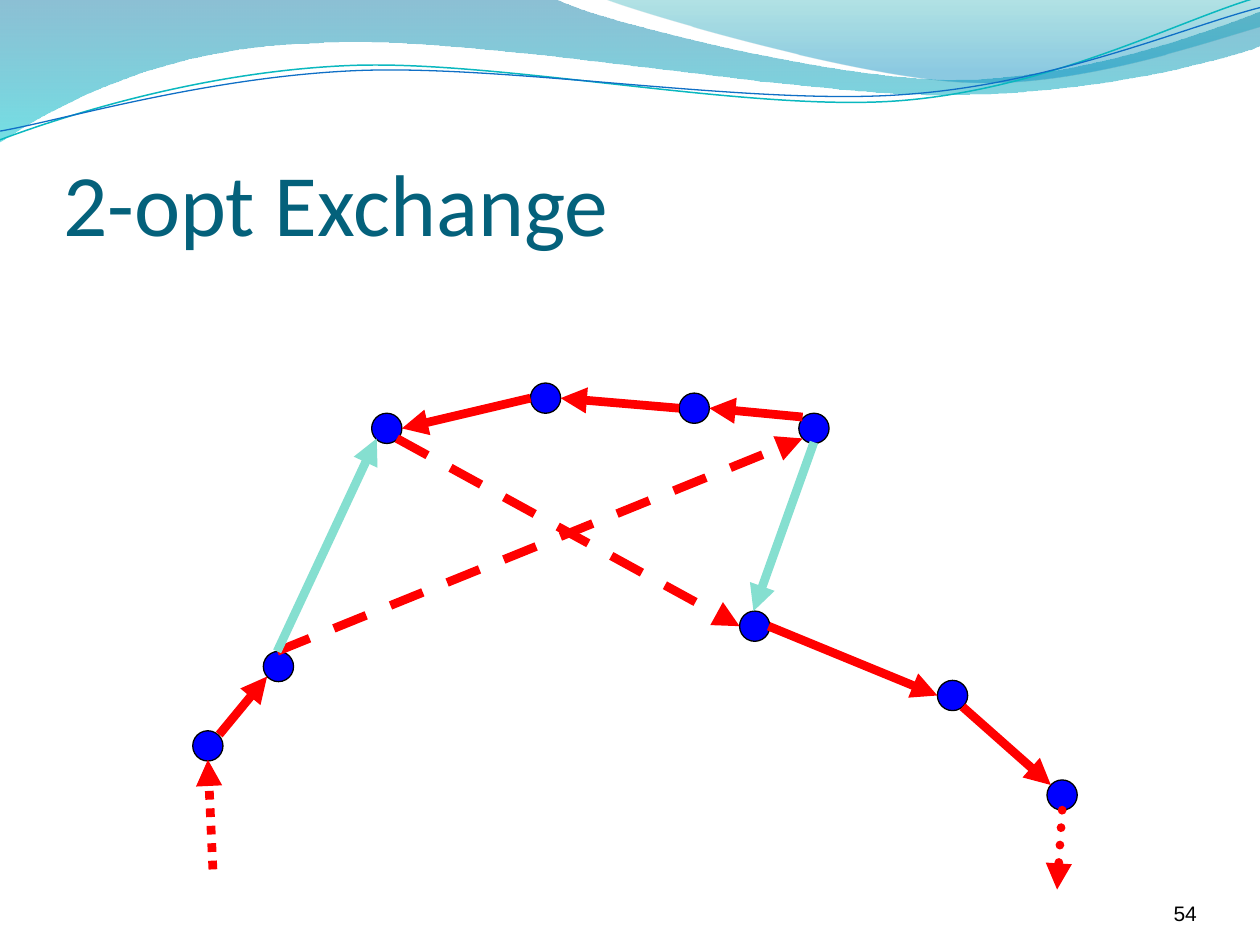
import math
from typing import NamedTuple, Optional

from lxml import etree
from pptx import Presentation
from pptx import util as u
from pptx.dml.color import RGBColor
from pptx.enum import dml, shapes, text
from pptx.oxml.ns import qn

PX = 9144  # EMU per px, 100 px to the inch
NODE_SIZE = 24

WHITE = RGBColor(0xFF, 0xFF, 0xFF)
BLACK = RGBColor(0x00, 0x00, 0x00)
RED = RGBColor(0xFF, 0x00, 0x00)
BLUE = RGBColor(0x00, 0x00, 0xFF)
MINT = RGBColor(0x85, 0xDF, 0xD0)
TITLE_TEAL = RGBColor(0x04, 0x61, 0x7B)
LINE_TEAL = RGBColor(0x0A, 0xB8, 0xBF)
LINE_BLUE = RGBColor(0x0F, 0x6F, 0xC6)
WAVE_BLUE = RGBColor(0x00, 0x74, 0xA1)
WAVE_CYAN = RGBColor(0x00, 0xC6, 0xCF)
CREST_TEAL = RGBColor(0x00, 0xA1, 0xA9)
CREST_BLUE = RGBColor(0x00, 0x8B, 0xBF)

DASH = dml.MSO_LINE.DASH
DOT = dml.MSO_LINE.ROUND_DOT


class Stop(NamedTuple):
    position: float
    color: RGBColor
    opacity: int


class Wave(NamedTuple):
    """An outline: steps of one point are straight, of three points Bezier."""
    start: tuple
    steps: list
    stops: tuple = ()
    line: Optional[RGBColor] = None
    width: float = 0
    tilt: float = 0
    pivot: tuple = (0, 0)


class Arrow(NamedTuple):
    start: tuple
    end: tuple
    color: RGBColor = RED
    dash: Optional[dml.MSO_LINE] = None
    round_cap: bool = False


WAVES = [
    Wave((0, 0), [[(440, -1)], [(476, 17), (664, 63), (758, 63)],
                  [(853, 63), (958, 26), (1000, 9)], [(1001, 36)],
                  [(983, 44), (870, 76), (746, 75)], [(622, 75), (382, 28), (257, 34)],
                  [(129, 36), (46, 83), (-1, 113)], [(0, 0)]],
         stops=(Stop(0, WAVE_BLUE, 45), Stop(1, WAVE_CYAN, 55))),
    Wave((479, -1), [[(509, 11), (682, 62), (769, 65)], [(856, 69), (961, 32), (1000, 21)],
                     [(1000, 0)], [(479, -1)]],
         stops=(Stop(0, CREST_TEAL, 30), Stop(0.8, CREST_BLUE, 45))),
    Wave((0, 111), [[(48, 93), (158, 57), (277, 52)], [(395, 47), (593, 89), (713, 80)],
                    [(833, 71), (938, 15), (998, -2)]],
         line=LINE_TEAL, width=0.85, tilt=-2.7, pivot=(499, 57)),
    Wave((0, 104), [[(47, 96), (164, 61), (283, 56)], [(403, 51), (597, 84), (717, 75)],
                    [(836, 67), (941, 21), (1000, 6)]],
         line=LINE_BLUE, width=0.75, tilt=-2.7, pivot=(499, 59)),
]

# Left and top of each tour node
NODES = [(634, 328), (153, 580), (295, 328), (421, 304), (539, 312),
         (209, 517), (587, 485), (744, 540), (831, 619)]

ARROWS = [
    Arrow((174, 583), (212, 537)),
    Arrow((220, 517), (637, 348), dash=DASH),
    Arrow((637, 331), (563, 324)),
    Arrow((539, 324), (445, 316)),
    Arrow((421, 316), (319, 340)),
    Arrow((315, 348), (587, 497), dash=DASH),
    Arrow((610, 497), (744, 552)),
    Arrow((764, 561), (834, 623)),
    Arrow((169, 690), (165, 603), dash=DOT),
    Arrow((843, 643), (839, 706), dash=DOT, round_cap=True),
    Arrow((220, 517), (299, 348), MINT),
    Arrow((646, 351), (598, 485), MINT),
]


def emu(*lengths: float) -> tuple:
    return tuple(u.Emu(round(length * PX)) for length in lengths)


def untilted(point: tuple, wave: Wave) -> tuple:
    """Where a point lies before the shape is rotated by its tilt."""
    angle = math.radians(-wave.tilt)
    x, y = point[0] - wave.pivot[0], point[1] - wave.pivot[1]
    return emu(wave.pivot[0] + x * math.cos(angle) - y * math.sin(angle),
               wave.pivot[1] + x * math.sin(angle) + y * math.cos(angle))


def bend(shape, steps: list) -> None:
    """Turn each run of three straight segments into one Bezier segment."""
    segments = iter(list(shape.element.spPr.iter(qn("a:lnTo"))))
    for step in steps:
        group = [next(segments) for _ in step]
        if len(group) == 3:
            curve = etree.Element(qn("a:cubicBezTo"))
            group[0].addprevious(curve)
            for segment in group:
                curve.append(segment[0])
                segment.getparent().remove(segment)


def draw_wave(slide, wave: Wave) -> None:
    builder = slide.shapes.build_freeform(*untilted(wave.start, wave))
    builder.add_line_segments([untilted(point, wave) for step in wave.steps for point in step],
                              close=bool(wave.stops))
    shape = builder.convert_to_shape()
    bend(shape, wave.steps)
    shape.rotation = wave.tilt
    shape.shadow.inherit = False
    if wave.line is None:
        shape.line.fill.background()
    else:
        shape.line.color.rgb = wave.line
        shape.line.width = u.Pt(wave.width)
    if not wave.stops:
        shape.fill.background()
        return
    shape.fill.gradient()
    shape.fill.gradient_angle = 270
    for target, stop in zip(shape.fill.gradient_stops, wave.stops):
        target.position = stop.position
        target.color.rgb = stop.color
    for color, stop in zip(shape.element.spPr.iter(qn("a:srgbClr")), wave.stops):
        etree.SubElement(color, qn("a:alpha"), val=str(stop.opacity * 1000))


def draw_node(slide, left: int, top: int) -> None:
    node = slide.shapes.add_shape(shapes.MSO_SHAPE.OVAL, *emu(left, top, NODE_SIZE, NODE_SIZE))
    node.shadow.inherit = False
    node.fill.solid()
    node.fill.fore_color.rgb = BLUE
    node.line.color.rgb = BLACK
    node.line.width = u.Pt(0.75)


def draw_arrow(slide, arrow: Arrow) -> None:
    connector = slide.shapes.add_connector(shapes.MSO_CONNECTOR.STRAIGHT,
                                           *emu(*arrow.start, *arrow.end))
    connector.line.color.rgb = arrow.color
    connector.line.width = u.Pt(5)
    if arrow.dash is not None:
        connector.line.dash_style = arrow.dash
    properties = connector.element.spPr
    outline = properties.find(qn("a:ln"))
    if arrow.round_cap:
        outline.set("cap", "rnd")
    etree.SubElement(outline, qn("a:tailEnd"), type="triangle")
    etree.SubElement(properties, qn("a:effectLst"))


def write_text(shape, words: str, font: str, size: int, color: RGBColor,
               align: text.PP_ALIGN, top_inset: int = 0) -> None:
    frame = shape.text_frame
    frame.text = words
    frame.word_wrap = True
    frame.auto_size = text.MSO_AUTO_SIZE.NONE
    frame.vertical_anchor = text.MSO_ANCHOR.BOTTOM
    frame.margin_left = frame.margin_right = frame.margin_bottom = 0
    frame.margin_top = emu(top_inset)[0]
    paragraph = frame.paragraphs[0]
    paragraph.alignment = align
    paragraph.font.name = font
    paragraph.font.size = u.Pt(size)
    paragraph.font.color.rgb = color


def main() -> None:
    presentation = Presentation()
    presentation.slide_width, presentation.slide_height = emu(1000, 750)
    slide = presentation.slides.add_slide(presentation.slide_layouts[5])
    slide.background.fill.solid()
    slide.background.fill.fore_color.rgb = WHITE

    # Header waves
    for wave in WAVES:
        draw_wave(slide, wave)

    # Title and slide number
    title = slide.shapes.title
    title.left, title.top, title.width, title.height = emu(50, 77, 900, 125)
    write_text(title, "2-opt Exchange", "Calibri", 50, TITLE_TEAL, text.PP_ALIGN.LEFT, 5)
    number = slide.shapes.add_textbox(*emu(867, 695, 83, 40))
    write_text(number, "54", "Arial", 12, BLACK, text.PP_ALIGN.RIGHT)

    # Tour
    for left, top in NODES:
        draw_node(slide, left, top)
    for arrow in ARROWS:
        draw_arrow(slide, arrow)

    presentation.save("out.pptx")


if __name__ == "__main__":
    main()
